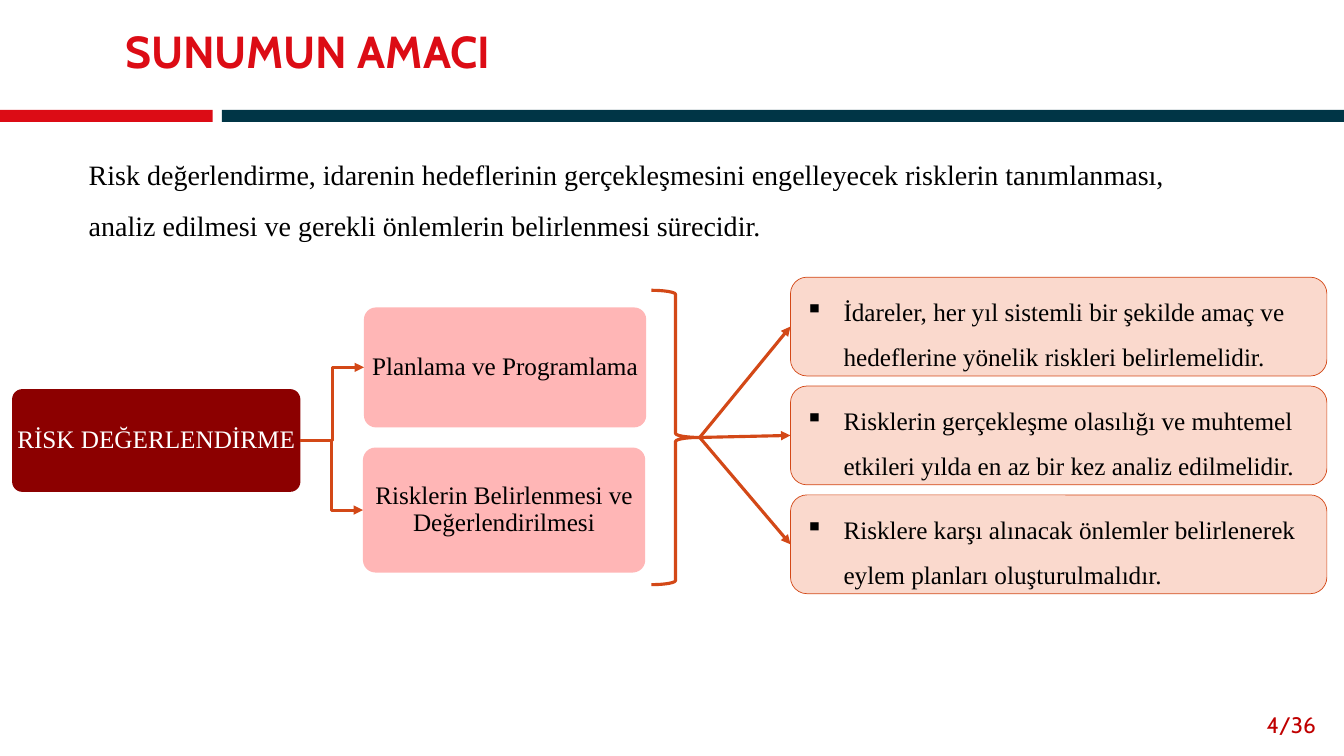
from lxml import etree
from pptx import Presentation
from pptx.dml.color import RGBColor
from pptx.enum.shapes import MSO_CONNECTOR, MSO_SHAPE
from pptx.enum.text import MSO_ANCHOR, PP_ALIGN
from pptx.oxml.ns import qn
from pptx.util import Inches, Pt

STRAIGHT, ELBOW = MSO_CONNECTOR.STRAIGHT, MSO_CONNECTOR.ELBOW
RECTANGLE, ROUNDED = MSO_SHAPE.RECTANGLE, MSO_SHAPE.ROUNDED_RECTANGLE
BRACE = MSO_SHAPE.RIGHT_BRACE
LEFT, CENTER, RIGHT = PP_ALIGN.LEFT, PP_ALIGN.CENTER, PP_ALIGN.RIGHT
TOP, MIDDLE = MSO_ANCHOR.TOP, MSO_ANCHOR.MIDDLE

SERIF, SANS = "Times New Roman", "Cabin"
RED, NAVY, DARK_RED, PINK = "DC0C15", "003546", "8C0000", "FFAFAF"
ORANGE, PEACH, BLACK, WHITE = "D34817", "FAD9CD", "000000", "FFFFFF"

PHASES = [
    ("Planlama ve Programlama", (3.61, 3.05, 2.8, 1.19)),
    ("Risklerin Belirlenmesi ve Değerlendirilmesi", (3.6, 4.44, 2.8, 1.24)),
]
REQUIREMENTS = [
    "İdareler, her yıl sistemli bir şekilde amaç ve hedeflerine yönelik "
    "riskleri belirlemelidir.",
    "Risklerin gerçekleşme olasılığı ve muhtemel etkileri yılda en az bir kez "
    "analiz edilmelidir.",
    "Risklere karşı alınacak önlemler belirlenerek eylem planları "
    "oluşturulmalıdır.",
]


def color(value):
    return RGBColor.from_string(value)


def place(shape, left, top, width, height):
    shape.left, shape.top = Inches(left), Inches(top)
    shape.width, shape.height = Inches(width), Inches(height)


def set_bullet(paragraph, character, indent):
    """Hang the paragraph on a bullet, or clear the inherited one."""
    properties = paragraph._p.get_or_add_pPr()
    properties.set("marL", str(Inches(indent)))
    properties.set("indent", str(-Inches(indent)))
    if character:
        etree.SubElement(properties, qn("a:buChar")).set("char", character)
    else:
        etree.SubElement(properties, qn("a:buNone"))


def write(shape, text, size=18, font=SERIF, fill=BLACK, bold=False, align=LEFT,
          anchor=MIDDLE, spacing=1.0, bullet=None, indent=0, margin=None):
    frame = shape.text_frame
    frame.word_wrap = True
    frame.vertical_anchor = anchor
    if margin is not None:
        frame.margin_left = frame.margin_right = Inches(margin)
        frame.margin_top = frame.margin_bottom = Inches(margin)
    paragraph = frame.paragraphs[0]
    paragraph.alignment = align
    paragraph.line_spacing = spacing
    paragraph.space_before = Pt(0)
    set_bullet(paragraph, bullet, indent)
    run = paragraph.add_run()
    run.text = text
    run.font.size, run.font.name, run.font.bold = Pt(size), font, bold
    run.font.color.rgb = color(fill)


def add_box(slide, kind, box, fill=None, line=None, line_width=0.5,
            rounding=None, opacity=None):
    shape = slide.shapes.add_shape(kind, *map(Inches, box))
    shape.shadow.inherit = False
    if rounding is not None:
        shape.adjustments[0] = rounding
    if fill:
        shape.fill.solid()
        shape.fill.fore_color.rgb = color(fill)
    else:
        shape.fill.background()
    if opacity is not None:
        fill_color = shape._element.spPr.find(".//" + qn("a:srgbClr"))
        etree.SubElement(fill_color, qn("a:alpha")).set("val", str(opacity * 1000))
    if line:
        shape.line.color.rgb = color(line)
        shape.line.width = Pt(line_width)
    else:
        shape.line.fill.background()
    return shape


def add_card(slide, text, box, fill, text_color, opacity=None):
    card = add_box(slide, ROUNDED, box, fill, rounding=0.1, opacity=opacity)
    write(card, text, fill=text_color, align=CENTER, spacing=0.9, margin=0.02)


def add_arrow(slide, kind, start, end):
    arrow = slide.shapes.add_connector(kind, *map(Inches, start + end))
    arrow.line.color.rgb = color(ORANGE)
    arrow.line.width = Pt(2.25)
    line = arrow.line._get_or_add_ln()
    etree.SubElement(line, qn("a:tailEnd")).set("type", "triangle")
    etree.SubElement(arrow._element.spPr, qn("a:effectLst"))


def left_middle(box):
    left, top, _, height = box
    return left, top + height / 2


def right_middle(box):
    left, top, width, height = box
    return left + width, top + height / 2


def add_header(slide):
    add_box(slide, RECTANGLE, (0, 1.09, 2.11, 0.12), RED)
    add_box(slide, RECTANGLE, (2.2, 1.09, 11.13, 0.12), NAVY)
    title, body = slide.placeholders
    place(title, 1.14, 0.14, 12.01, 0.8)
    write(title, "SUNUMUN AMACI", size=32, font=SANS, fill=RED, bold=True,
          spacing=0.9)
    place(body, 0.78, 1.35, 11.26, 1.11)
    write(body, "Risk değerlendirme, idarenin hedeflerinin gerçekleşmesini "
          "engelleyecek risklerin tanımlanması, analiz edilmesi ve gerekli "
          "önlemlerin belirlenmesi sürecidir.", size=20, anchor=TOP, spacing=1.5)


def add_phases(slide):
    root = (0.12, 3.86, 2.86, 1.02)
    add_card(slide, "RİSK DEĞERLENDİRME", root, DARK_RED, WHITE)
    for text, box in PHASES:
        add_card(slide, text, box, PINK, BLACK, opacity=90)
        add_arrow(slide, ELBOW, right_middle(root), left_middle(box))


def add_requirements(slide):
    brace = (6.46, 2.88, 0.48, 2.92)
    add_box(slide, BRACE, brace, line=ORANGE, line_width=2.25)
    for index, text in enumerate(REQUIREMENTS):
        box = (7.84, 2.75 + 1.08 * index, 5.32, 0.98)
        requirement = add_box(slide, ROUNDED, box, PEACH, ORANGE)
        write(requirement, text, spacing=1.5, bullet="▪", indent=0.38)
        add_arrow(slide, STRAIGHT, right_middle(brace), left_middle(box))


def main():
    presentation = Presentation()
    presentation.slide_width = Inches(13.33)
    presentation.slide_height = Inches(7.5)
    slide = presentation.slides.add_slide(presentation.slide_layouts[1])
    add_header(slide)
    add_phases(slide)
    add_requirements(slide)
    page_number = slide.shapes.add_textbox(*map(Inches, (12.25, 6.99, 0.9, 0.4)))
    write(page_number, "4/36", size=16, font=SANS, fill="C00000", align=RIGHT)
    presentation.save("out.pptx")


if __name__ == "__main__":
    main()
